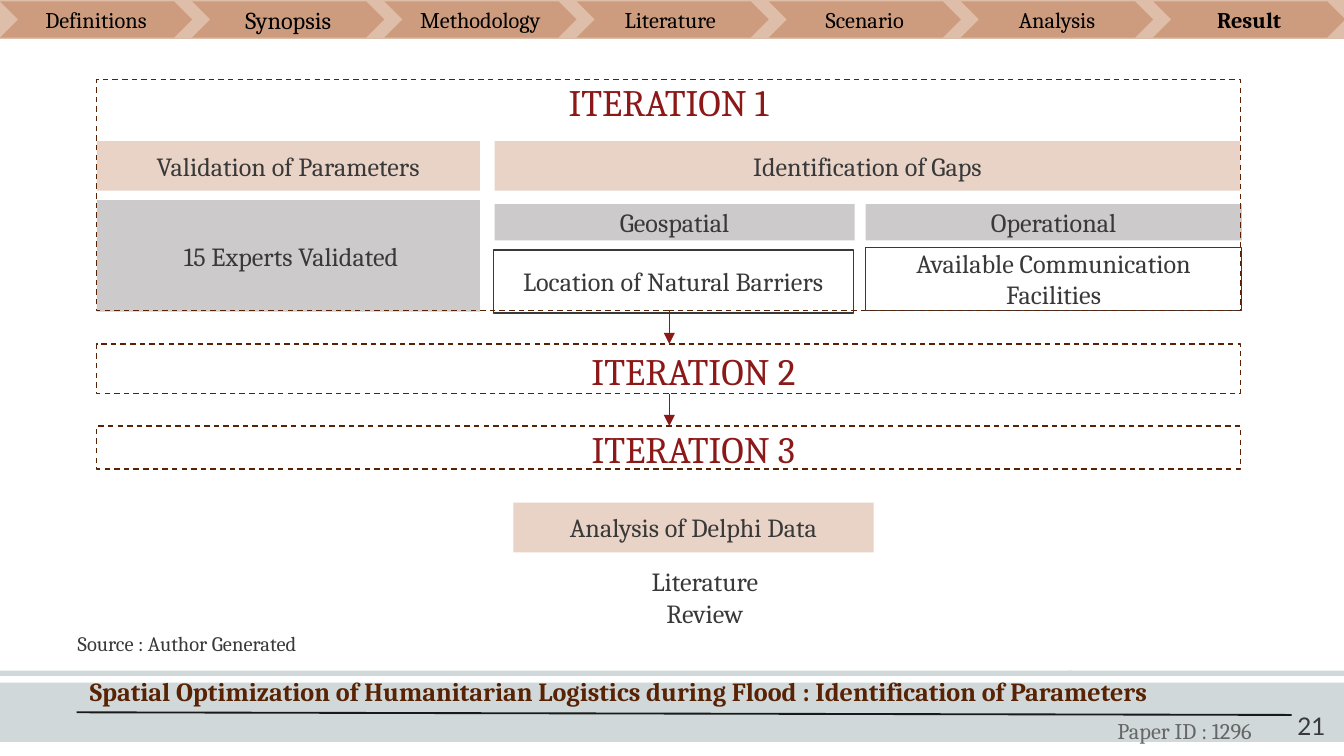
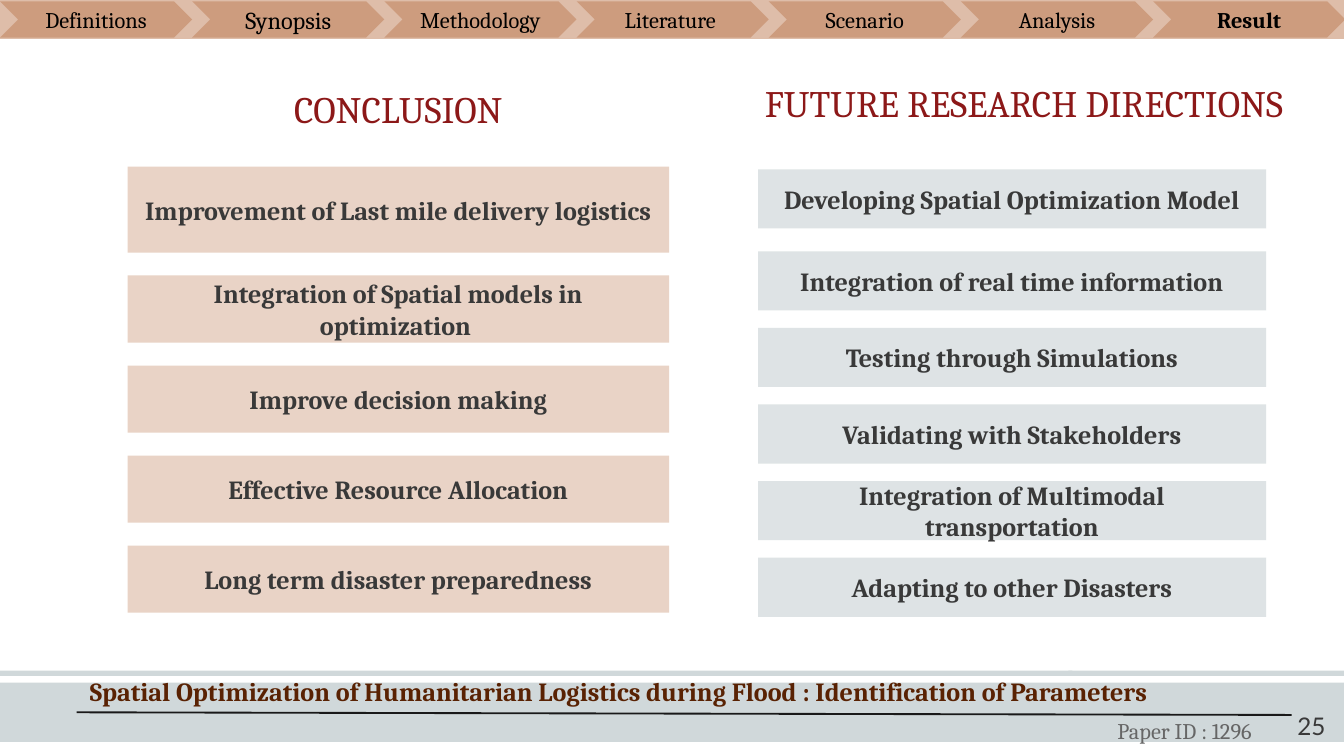
"""Build two slides on iteration results, conclusions and future research."""
from pptx import Presentation
from pptx.dml.color import RGBColor
from pptx.enum.dml import MSO_LINE
from pptx.enum.shapes import MSO_CONNECTOR, MSO_SHAPE
from pptx.enum.text import MSO_ANCHOR as ANCHOR, MSO_AUTO_SIZE as AUTO_SIZE, PP_ALIGN as ALIGN
from pptx.oxml.ns import qn
from pptx.oxml.xmlchemy import OxmlElement
from pptx.util import Inches, Pt

BROWN, PEACH, MIST, GREY = "BE7D55", "E9D3C6", "D0D8DA", "CCCACA"
DARK, RED, UMBER, BLACK = "393939", "8C1818", "592203", "000000"

SECTIONS = ["Definitions", "Synopsis", "Methodology", "Literature ", "Scenario", "Analysis", "Result"]
SECTION_WIDTH = 1.43
PAPER_TITLE = "Spatial Optimization of Humanitarian Logistics during Flood : Identification of Parameters"
PAPER_ID = "Paper ID : 1296"
FOOTER_BANDS = [(0, 5.08, 10, 0.44), (0, 4.99, 7.98, 0.04), (7.95, 4.99, 2.05, 0.04)]

ITERATION_TITLES = [
    ("ITERATION 1", (0.72, 0.49, 8.51, 0.47)),
    ("ITERATION 2", (3.82, 2.49, 2.68, 0.47)),
    ("ITERATION 3", (3.82, 3.07, 2.68, 0.47)),
]
ITERATION_BOXES = [
    ("Validation of Parameters", (0.72, 1.05, 2.85, 0.37), PEACH),
    ("Identification of Gaps", (3.68, 1.05, 5.55, 0.37), PEACH),
    (" 15 Experts Validated", (0.72, 1.49, 2.85, 0.83), GREY),
    ("Geospatial", (3.68, 1.52, 2.68, 0.27), GREY),
    ("Operational", (6.44, 1.52, 2.8, 0.27), GREY),
    ("Location of Natural Barriers", (3.67, 1.86, 2.68, 0.47), None),
    ("Available Communication Facilities", (6.44, 1.84, 2.8, 0.47), None),
    ("Analysis of Delphi Data", (3.82, 3.74, 2.68, 0.37), PEACH),
]
FRAMES = [(0.72, 0.59, 8.51, 1.72), (0.72, 2.56, 8.51, 0.37), (0.72, 3.17, 8.51, 0.32)]
ARROW_X = 4.98

COLUMNS = [
    {
        "title": "CONCLUSION", "title_box": (0.95, 0.54, 4.03, 0.56),
        "left": 0.95, "width": 4.03, "fill": PEACH, "opacity": 100,
        "first": (1.24, 0.64), "next_top": 2.05, "height": 0.5, "gap": 0.17,
        "items": [
            "Improvement of Last mile delivery logistics",
            "Integration of Spatial models in optimization ",
            "Improve decision making",
            "Effective Resource Allocation",
            "Long term disaster preparedness",
        ],
    },
    {
        "title": "FUTURE RESEARCH DIRECTIONS", "title_box": (5.25, 0.5, 4.74, 0.52),
        "left": 5.64, "width": 3.78, "fill": MIST, "opacity": 70,
        "first": (1.26, 0.44), "next_top": 1.87, "height": 0.44, "gap": 0.13,
        "items": [
            "Developing Spatial Optimization Model",
            "Integration of real time information",
            "Testing through Simulations",
            "Validating with Stakeholders",
            "Integration of Multimodal transportation",
            "Adapting to other Disasters",
        ],
    },
]


def rgb(value):
    return RGBColor.from_string(value)


def write(shape, text, size=14, color=DARK, bold=False, font="Cambria",
          align=ALIGN.CENTER, anchor=ANCHOR.MIDDLE, inset=0.1):
    frame = shape.text_frame
    frame.text = text
    frame.word_wrap = True
    frame.auto_size = AUTO_SIZE.NONE
    frame.vertical_anchor = anchor
    frame.margin_left = frame.margin_right = Inches(0.1)
    frame.margin_top = frame.margin_bottom = Inches(inset)
    paragraph = frame.paragraphs[0]
    paragraph.alignment = align
    run_font = paragraph.runs[0].font
    run_font.name, run_font.size, run_font.bold = font, Pt(size), bold
    run_font.color.rgb = rgb(color)


def add_box(slide, box, fill=None, line=None, dashed=False, opacity=100, kind=MSO_SHAPE.RECTANGLE):
    shape = slide.shapes.add_shape(kind, *map(Inches, box))
    shape.shadow.inherit = False
    if fill:
        shape.fill.solid()
        shape.fill.fore_color.rgb = rgb(fill)
        if opacity < 100:
            alpha = OxmlElement("a:alpha")
            alpha.set("val", str(opacity * 1000))
            shape.element.spPr.find(qn("a:solidFill"))[0].append(alpha)
    else:
        shape.fill.background()
    if line:
        shape.line.color.rgb = rgb(line)
        shape.line.width = Pt(0.75)
        if dashed:
            shape.line.dash_style = MSO_LINE.DASH
    else:
        shape.line.fill.background()
    return shape


def add_text(slide, box, text, **style):
    write(slide.shapes.add_textbox(*map(Inches, box)), text, **style)


def add_line(slide, start, end, color, width, arrow=False):
    line = slide.shapes.add_connector(MSO_CONNECTOR.STRAIGHT, *map(Inches, start + end))
    line.line.color.rgb = rgb(color)
    line.line.width = Pt(width)
    properties = line.element.spPr
    if arrow:
        tail = OxmlElement("a:tailEnd")
        tail.set("type", "triangle")
        properties.find(qn("a:ln")).append(tail)
    properties.append(OxmlElement("a:effectLst"))


def add_titles(slide, titles):
    for index, (text, box) in enumerate(titles):
        if index == 0:
            shape = slide.shapes.title
            shape.left, shape.top, shape.width, shape.height = map(Inches, box)
        else:
            shape = slide.shapes.add_textbox(*map(Inches, box))
        write(shape, text, size=20, color=RED, anchor=ANCHOR.TOP)


def furnish_layout(slide, layout):
    """Draw the shared bands and footer, then move them to the layout."""
    for band in FOOTER_BANDS:
        add_box(slide, band, MIST)
    add_line(slide, (0.57, 5.3), (9.61, 5.32), "191919", 1)
    add_text(slide, (0.57, 4.98, 9.03, 0.34), PAPER_TITLE, color=UMBER, bold=True,
             align=ALIGN.LEFT, anchor=ANCHOR.TOP, inset=0.05)
    add_text(slide, (7.95, 5.29, 1.73, 0.3), PAPER_ID, size=12, color="666666",
             anchor=ANCHOR.TOP, inset=0.05)
    add_box(slide, (0, 0, 10, 0.29), BROWN, opacity=50)
    for shape in list(slide.shapes):
        if not shape.is_placeholder:
            layout.shapes.element.append(shape.element)


def add_navigation(slide, number):
    add_text(slide, (9.36, 5.19, 0.6, 0.43), number, size=13, font="Lato",
             align=ALIGN.RIGHT, anchor=ANCHOR.TOP)
    for index, section in enumerate(SECTIONS):
        chevron = add_box(slide, (index * SECTION_WIDTH, 0.01, SECTION_WIDTH, 0.27), BROWN,
                          opacity=50, kind=MSO_SHAPE.CHEVRON)
        write(chevron, section, size=13 if section == "Synopsis" else 12, color=BLACK,
              bold=section == "Result")


def build_iterations(slide):
    add_navigation(slide, "21")
    add_titles(slide, ITERATION_TITLES)
    for text, box, fill in ITERATION_BOXES:
        write(add_box(slide, box, fill, None if fill else DARK), text)
    add_text(slide, (4.47, 4.11, 1.55, 0.44), "Literature Review", anchor=ANCHOR.TOP)
    for frame in FRAMES:
        add_box(slide, frame, line=UMBER, dashed=True)
    for upper, lower in zip(FRAMES, FRAMES[1:]):
        add_line(slide, (ARROW_X, upper[1] + upper[3]), (ARROW_X, lower[1]), RED, 0.75, arrow=True)
    add_text(slide, (0.48, 4.6, 9.05, 0.38), "Source : Author Generated", size=11, align=ALIGN.LEFT)


def build_conclusion(slide):
    add_navigation(slide, "25")
    add_titles(slide, [(column["title"], column["title_box"]) for column in COLUMNS])
    for column in COLUMNS:
        step = column["height"] + column["gap"]
        for index, item in enumerate(column["items"]):
            top, height = column["first"]
            if index:
                top, height = column["next_top"] + (index - 1) * step, column["height"]
            box = (column["left"], top, column["width"], height)
            write(add_box(slide, box, column["fill"], opacity=column["opacity"]), item, bold=True)


def main():
    presentation = Presentation()
    presentation.slide_width = Inches(10)
    presentation.slide_height = Inches(10) * 9 // 16
    layout = presentation.slide_layouts[5]
    slides = [presentation.slides.add_slide(layout) for _ in range(2)]
    furnish_layout(slides[0], layout)
    build_iterations(slides[0])
    build_conclusion(slides[1])
    presentation.save("out.pptx")


if __name__ == "__main__":
    main()
